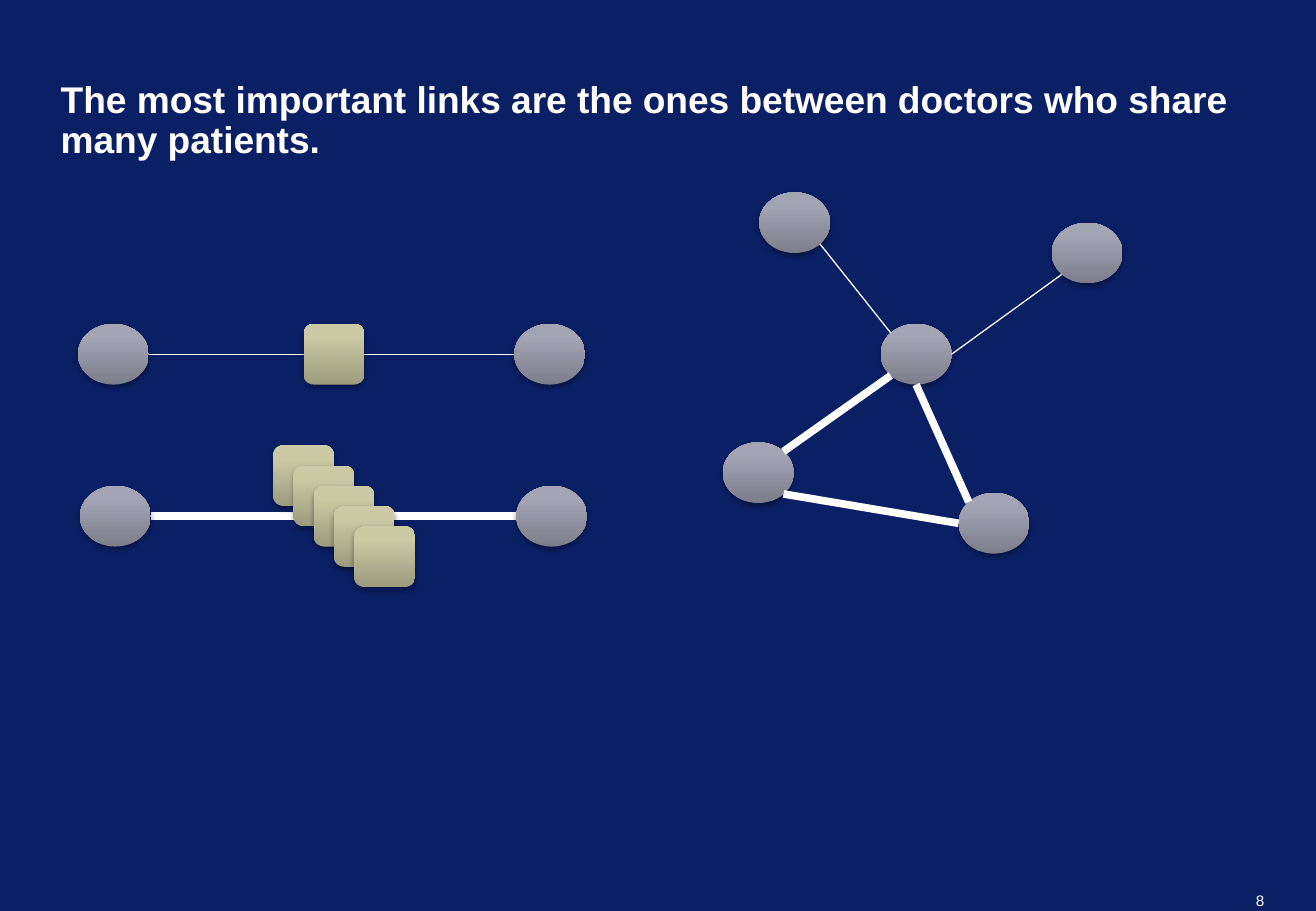
from math import cos, radians, sin
from lxml import etree
from pptx import Presentation
from pptx.dml.color import RGBColor
from pptx.enum.shapes import MSO_CONNECTOR, MSO_SHAPE
from pptx.enum.text import MSO_ANCHOR, PP_ALIGN
from pptx.oxml import parse_xml
from pptx.oxml.ns import qn
from pptx.util import Pt

OVAL, ROUND = MSO_SHAPE.OVAL, MSO_SHAPE.ROUNDED_RECTANGLE
STRAIGHT = MSO_CONNECTOR.STRAIGHT
TOP, BOTTOM = MSO_ANCHOR.TOP, MSO_ANCHOR.BOTTOM
LEFT, RIGHT = PP_ALIGN.LEFT, PP_ALIGN.RIGHT
SPACE = "http://schemas.openxmlformats.org/drawingml/2006/main"
COLORS = {"navy": "0B1F65", "white": "FFFFFF", "black": "000000"}
FADES = {
    "doctor": {0: "7D7E8B", 80: "A3A4B4", 100: "A3A4B6"},
    "patient": {0: "9C9B7E", 80: "CBCAA4", 100: "CDCCA4"},
}
THIN, THICK = 0.75, 4.5
WIDE, SIDE = 70, 60


def assign(item, values):
    for name, value in values.items():
        setattr(item, name, value)


def site(node, angle):
    left, top = node
    turn = radians(angle)
    return (round(left + WIDE / 2 * (1 + cos(turn))),
            round(top + SIDE / 2 * (1 + sin(turn))))


class Board:
    def __init__(self, deck):
        self.scale = 7620
        self.font = "Arial"
        assign(deck, {"slide_width": self.px(1300), "slide_height": self.px(900)})
        self.slide = deck.slides.add_slide(deck.slide_layouts[6])
        fill = self.slide.background.fill
        fill.solid()
        fill.fore_color.rgb = self.color("navy")

    def px(self, size):
        return size * self.scale

    def color(self, name):
        return RGBColor.from_string(COLORS[name])

    def text(self, words, box, size, bold=False, wrap=True,
             anchor=TOP, align=LEFT, space=1.0):
        frame = self.slide.shapes.add_textbox(*map(self.px, box)).text_frame
        assign(frame, {"margin_left": 0, "margin_right": 0, "margin_top": 0,
                       "margin_bottom": 0, "word_wrap": wrap,
                       "vertical_anchor": anchor})
        line = frame.paragraphs[0]
        assign(line, {"text": words, "alignment": align, "line_spacing": space})
        font = line.runs[0].font
        assign(font, {"name": self.font, "size": Pt(size), "bold": bold})
        font.color.rgb = self.color("white")

    def shape(self, kind, box, fade, parent=None):
        shapes = (parent or self.slide).shapes
        shape = shapes.add_shape(kind, *map(self.px, box))
        props = shape._element.spPr
        stops = "".join(
            f'<a:gs pos="{spot * 1000}"><a:srgbClr val="{tone}"/></a:gs>'
            for spot, tone in FADES[fade].items())
        props.append(parse_xml(
            f'<a:gradFill xmlns:a="{SPACE}" rotWithShape="1"><a:gsLst>{stops}'
            '</a:gsLst><a:lin ang="16200000" scaled="0"/></a:gradFill>'))
        shape.line.fill.background()
        shape.shadow.inherit = False
        props.find(qn("a:effectLst")).append(parse_xml(
            f'<a:outerShdw xmlns:a="{SPACE}" blurRad="40000" dist="23000" '
            f'dir="5400000" rotWithShape="0"><a:srgbClr val="{COLORS["black"]}">'
            '<a:alpha val="35000"/></a:srgbClr></a:outerShdw>'))

    def doctor(self, node):
        self.shape(OVAL, (*node, WIDE, SIDE), "doctor")

    def patient(self, left, top, parent=None):
        self.shape(ROUND, (left, top, SIDE, SIDE), "patient", parent)

    def stack(self, left, top, count, step):
        group = self.slide.shapes.add_group_shape()
        for shift in range(0, count * step, step):
            self.patient(left + shift, top + shift, group)

    def link(self, start, end, width):
        ends = map(self.px, (*start, *end))
        line = self.slide.shapes.add_connector(STRAIGHT, *ends)
        line.line.width = Pt(width)
        line.line.color.rgb = self.color("white")
        etree.SubElement(line._element.spPr, qn("a:effectLst"))

    def pair(self, left, top, width):
        ends = (left, top), (left + 431, top)
        self.link(site(ends[0], 0), site(ends[1], 180), width)
        for node in ends:
            self.doctor(node)


def main():
    deck = Presentation()
    board = Board(deck)
    board.text("8", (1231, 881, 18, 18), 9, wrap=False, align=RIGHT)
    board.text("The most important links are the ones between doctors "
               "who share many patients.",
               (60, 50, 1180, 110), 22, bold=True, anchor=BOTTOM, space=0.9)

    board.pair(77, 320, THIN)
    board.patient(300, 320)
    board.pair(79, 480, THICK)
    board.stack(270, 440, 5, 20)

    nodes = {"north": (750, 190), "west": (714, 437), "hub": (870, 320),
             "east": (1039, 220), "south": (947, 487)}
    for node in nodes.values():
        board.doctor(node)
    links = [
        ("west", 315, "hub", 135, THICK),
        ("south", 225, "hub", 90, THICK),
        ("west", 45, "south", 180, THICK),
        ("north", 45, "hub", 225, THIN),
        ("hub", 0, "east", 135, THIN),
    ]
    for start, out, end, into, width in links:
        board.link(site(nodes[start], out), site(nodes[end], into), width)
    deck.save("out.pptx")


if __name__ == "__main__":
    main()
